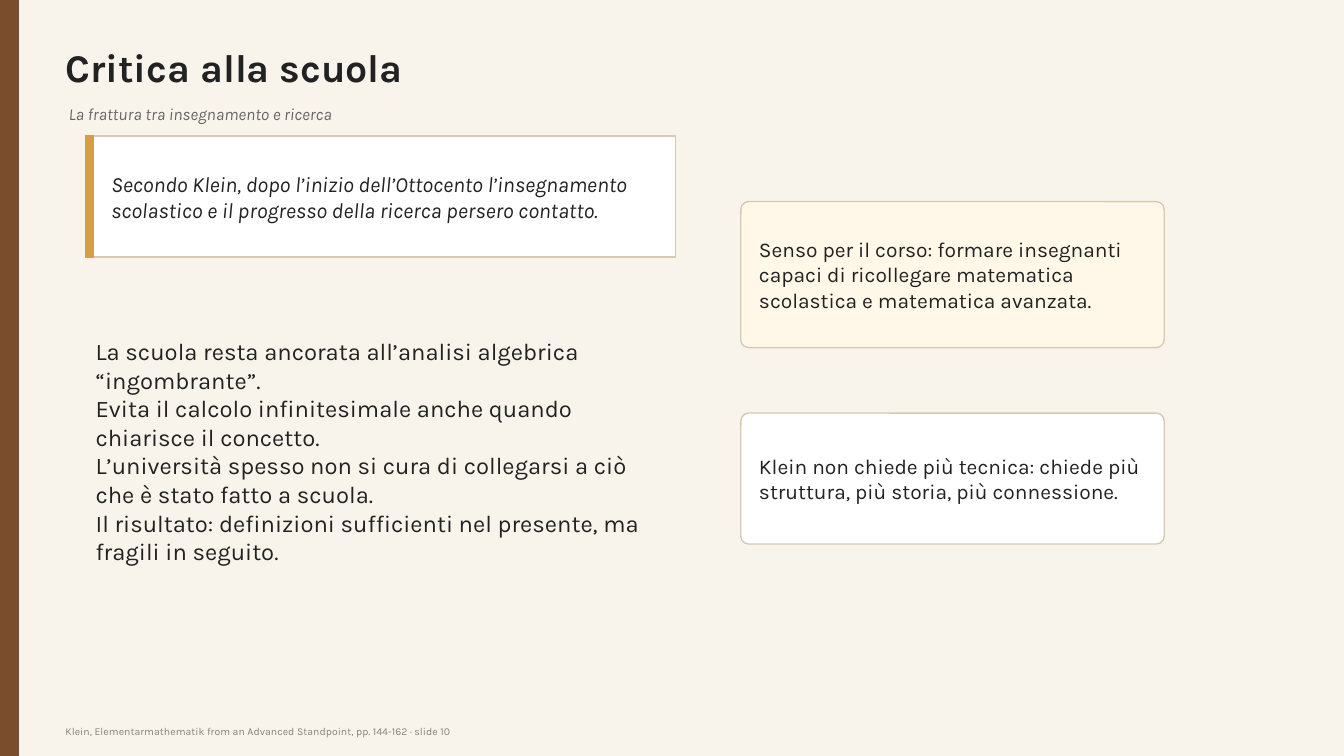
from dataclasses import dataclass

from pptx import Presentation
from pptx.dml import color
from pptx.enum import shapes, text
from pptx.util import Cm, Pt


@dataclass(frozen=True)
class Theme:
    font: str = "Karla"
    paper: str = "F8F4EC"
    brown: str = "7A4E2D"
    gold: str = "D99B44"
    edge: str = "D8C9B2"
    white: str = "FFFFFF"
    cream: str = "FFF8E9"
    ink: str = "222222"
    grey: str = "666666"
    dust: str = "8A8178"
    title: float = 28
    sub: float = 12
    quote: float = 15.5
    body: float = 17
    card: float = 15
    foot: float = 7.5


THEME = Theme()
RADIUS = Cm(0.2)


def rgb(code):
    return color.RGBColor.from_string(code)


def place(shape, box):
    shape.left, shape.top, shape.width, shape.height = map(Cm, box)


def write(shape, words, size, ink=THEME.ink, bold=False, italic=False, left=0, right=0):
    frame = shape.text_frame
    frame.word_wrap = True
    frame.auto_size = text.MSO_AUTO_SIZE.NONE
    frame.vertical_anchor = text.MSO_ANCHOR.MIDDLE
    frame.margin_left, frame.margin_right = Cm(left), Cm(right)
    frame.margin_top = frame.margin_bottom = 0
    frame.text = words
    for para in frame.paragraphs:
        para.alignment = text.PP_ALIGN.LEFT
        for run in para.runs:
            font = run.font
            font.name, font.size = THEME.font, Pt(size)
            font.bold, font.italic = bold, italic
            font.color.rgb = rgb(ink)


def label(slide, box, words, size, **style):
    write(slide.shapes.add_textbox(*map(Cm, box)), words, size, **style)


def panel(slide, box, fill, line, kind=shapes.MSO_SHAPE.RECTANGLE):
    shape = slide.shapes.add_shape(kind, *map(Cm, box))
    shape.shadow.inherit = False
    shape.fill.solid()
    shape.fill.fore_color.rgb = rgb(fill)
    shape.line.color.rgb = rgb(line)
    shape.line.width = Pt(1)
    return shape


def card(slide, box, fill, words):
    shape = panel(slide, box, fill, THEME.edge, shapes.MSO_SHAPE.ROUNDED_RECTANGLE)
    shape.adjustments[0] = RADIUS / shape.height
    write(shape, words, THEME.card, left=0.4, right=0.4)


def quote(slide, box, words):
    left, top, _, height = box
    shape = panel(slide, box, THEME.white, THEME.edge)
    write(shape, words, THEME.quote, italic=True, left=0.64, right=0.38)
    panel(slide, (left, top, 0.2, height), THEME.gold, THEME.gold)


def main():
    deck = Presentation()
    deck.slide_width, deck.slide_height = Cm(33.87), Cm(19.05)
    slide = deck.slides.add_slide(deck.slide_layouts[5])
    slide.background.fill.solid()
    slide.background.fill.fore_color.rgb = rgb(THEME.paper)

    panel(slide, (0, 0, 0.46, 19.05), THEME.brown, THEME.brown)
    title = slide.shapes.title
    place(title, (1.65, 0.89, 26.92, 1.57))
    write(title, "Critica alla scuola", THEME.title, bold=True)
    label(slide, (1.73, 2.46, 25.91, 0.84), "La frattura tra insegnamento e ricerca",
          THEME.sub, ink=THEME.grey, italic=True)

    quote(slide, (2.16, 3.43, 14.86, 3.05),
          "Secondo Klein, dopo l’inizio dell’Ottocento l’insegnamento scolastico "
          "e il progresso della ricerca persero contatto.")
    points = (
        "La scuola resta ancorata all’analisi algebrica “ingombrante”.",
        "Evita il calcolo infinitesimale anche quando chiarisce il concetto.",
        "L’università spesso non si cura di collegarsi a ciò che è stato fatto a scuola.",
        "Il risultato: definizioni sufficienti nel presente, ma fragili in seguito.",
    )
    label(slide, (2.41, 7.75, 14.35, 7.24), "\n".join(points), THEME.body)

    card(slide, (18.67, 5.08, 10.67, 3.68), THEME.cream,
         "Senso per il corso: formare insegnanti capaci di ricollegare "
         "matematica scolastica e matematica avanzata.")
    card(slide, (18.67, 10.41, 10.67, 3.3), THEME.white,
         "Klein non chiede più tecnica: chiede più struttura, più storia, più connessione.")
    label(slide, (1.65, 18.19, 24.13, 0.46),
          "Klein, Elementarmathematik from an Advanced Standpoint, pp. 144-162 · slide 10",
          THEME.foot, ink=THEME.dust)
    deck.save("out.pptx")


if __name__ == "__main__":
    main()
